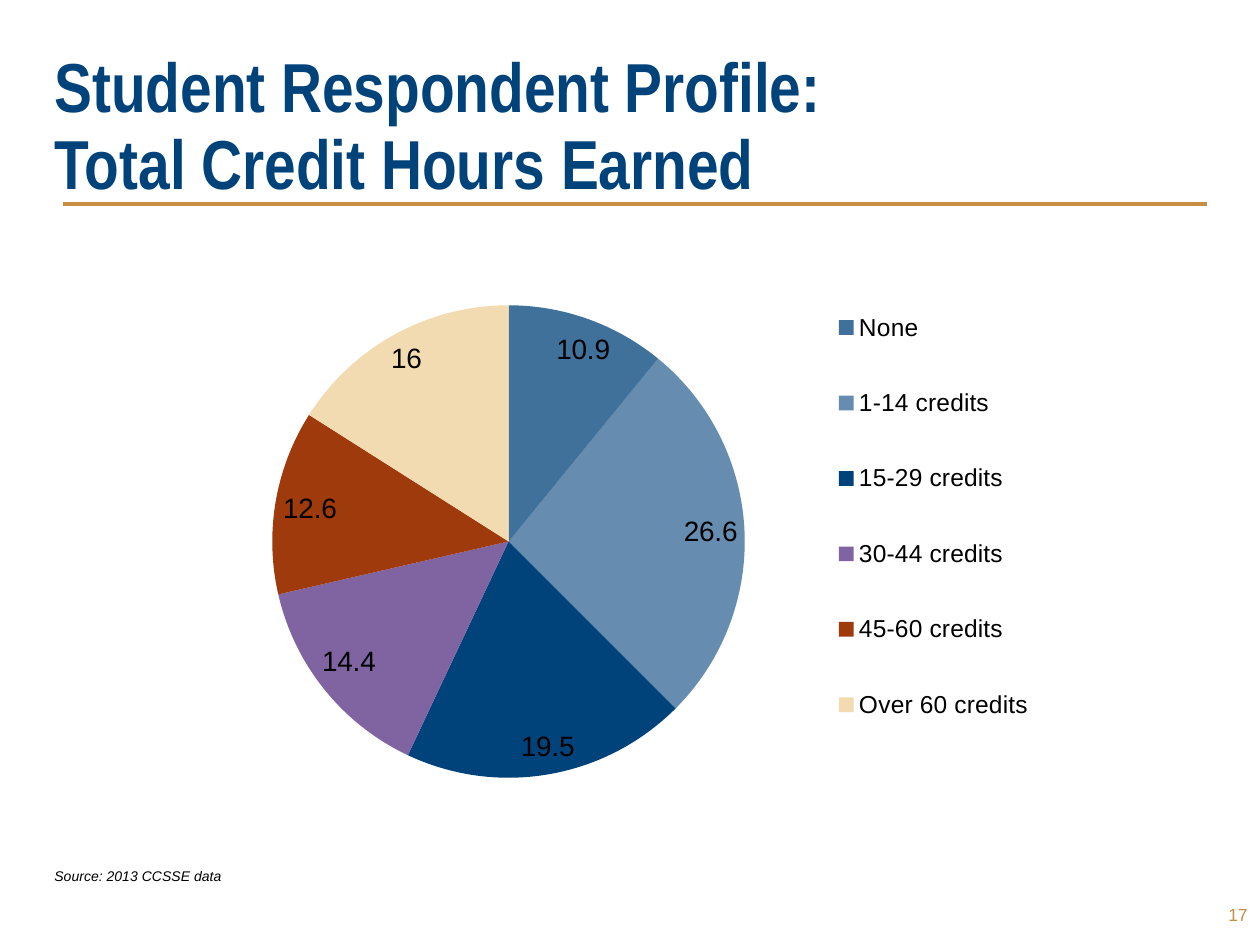
from lxml.etree import SubElement
from pptx import Presentation
from pptx.chart.data import CategoryChartData as ChartData
from pptx.dml.color import RGBColor
from pptx.enum.chart import XL_CHART_TYPE as ChartType
from pptx.enum.chart import XL_LABEL_POSITION as LabelPosition
from pptx.enum.chart import XL_LEGEND_POSITION as LegendPosition
from pptx.enum.shapes import MSO_CONNECTOR as Connector
from pptx.enum.text import MSO_ANCHOR as Anchor
from pptx.enum.text import PP_ALIGN as Align
from pptx.oxml import parse_xml
from pptx.oxml.ns import nsdecls, qn
from pptx.util import Pt

NAVY, GOLD, BLACK = "00427A", "C78E44", "000000"


def color(value):
    return RGBColor.from_string(value)


def apply(target, formats):
    for name, value in formats.items():
        setattr(target, name, value)


class SlideBuilder:
    font = "Arial"

    def __init__(self, deck):
        self.page = deck.slides.add_slide(deck.slide_layouts[6])

    def style(self, font, size, tint=BLACK, **formats):
        apply(font, {"name": self.font, "size": Pt(size), **formats})
        font.color.rgb = color(tint)

    def text(self, place, lines, size, tint=BLACK, anchor=Anchor.TOP,
             layout=None, **formats):
        box = self.page.shapes.add_textbox(*map(Pt, place))
        frame = box.text_frame
        apply(frame, {"word_wrap": True, "vertical_anchor": anchor})
        para = frame.paragraphs[0]
        apply(para, layout or {})
        for index, line in enumerate(lines):
            if index:
                para.add_line_break()
            span = para.add_run()
            span.text = line
            self.style(span.font, size, tint, **formats)

    def rule(self, start, end, tint, width):
        line = self.page.shapes.add_connector(
            Connector.STRAIGHT, *map(Pt, start + end))
        line.line.color.rgb = color(tint)
        line.line.width = Pt(width)
        SubElement(line._element.spPr, qn("a:effectLst"))

    def pie(self, place, plot_area, legend_area, slices):
        data = ChartData()
        data.categories = [name for name, *_ in slices]
        data.add_series("Series 1", [value for _, value, *_ in slices])
        chart = self.page.shapes.add_chart(
            ChartType.PIE, *map(Pt, place), data).chart
        apply(chart, {"has_title": False, "has_legend": True})
        self.style(chart.font, 18)
        apply(chart.legend, {"position": LegendPosition.RIGHT,
                             "include_in_layout": False})
        self.style(chart.legend.font, 14)

        plot = chart.plots[0]
        apply(plot, {"vary_by_categories": True, "has_data_labels": True})
        apply(plot.data_labels, {
            "show_value": True, "show_percentage": False,
            "number_format": "General", "number_format_is_linked": False,
            "position": LabelPosition.BEST_FIT})
        self.style(plot.data_labels.font, 16)
        for index, (_, _, tint, opacity) in enumerate(slices):
            fill = plot.series[0].points[index].format.fill
            fill.solid()
            fill.fore_color.rgb = color(tint)
            if opacity < 100:
                shade = fill._xPr.find(".//" + qn("a:srgbClr"))
                SubElement(shade, qn("a:alpha"), val=str(opacity * 1000))

        space = chart._chartSpace
        self.arrange(space.find(".//" + qn("c:plotArea")), 0, place,
                     plot_area, layoutTarget="inner")
        self.arrange(space.find(".//" + qn("c:legend")), 1, place,
                     legend_area)

    def arrange(self, part, index, place, area, **target):
        for old in part.findall(qn("c:layout")):
            part.remove(old)
        width, height = place[2:]
        shares = [length / whole
                  for length, whole in zip(area, (width, height) * 2)]
        settings = {**target, "xMode": "edge", "yMode": "edge",
                    **dict(zip("xywh", shares))}
        parts = "".join(f'<c:{name} val="{value}"/>'
                        for name, value in settings.items())
        part.insert(index, parse_xml(
            f'<c:layout {nsdecls("c")}><c:manualLayout>{parts}'
            '</c:manualLayout></c:layout>'))


def main():
    deck = Presentation()
    apply(deck, {"slide_width": Pt(720), "slide_height": Pt(540)})
    builder = SlideBuilder(deck)
    builder.rule((36, 116.6), (690, 116.6), GOLD, 2.25)
    builder.text((24, 38, 672, 81.5),
                 ["Student Respondent Profile:", "Total Credit Hours Earned"],
                 39.6, NAVY, Anchor.BOTTOM, {"line_spacing": Pt(44)},
                 name="Arial Narrow", bold=True)
    builder.text((672, 510, 48, 25), ["17"], 10, GOLD, Anchor.MIDDLE,
                 {"alignment": Align.RIGHT})
    builder.text((24, 492, 144, 17), ["Source: 2013 CCSSE data"], 8,
                 italic=True)
    builder.pie((30, 138, 654, 336), (125.6, 14, 270, 315),
                (438, 14, 131, 286), [
        ("None", 10.9, NAVY, 75),
        ("1-14 credits", 26.6, NAVY, 60),
        ("15-29 credits", 19.5, NAVY, 100),
        ("30-44 credits", 14.4, "8064A2", 100),
        ("45-60 credits", 12.6, "9F3A0D", 100),
        ("Over 60 credits", 16, "F2DAB1", 100),
    ])
    deck.save("out.pptx")


if __name__ == "__main__":
    main()
